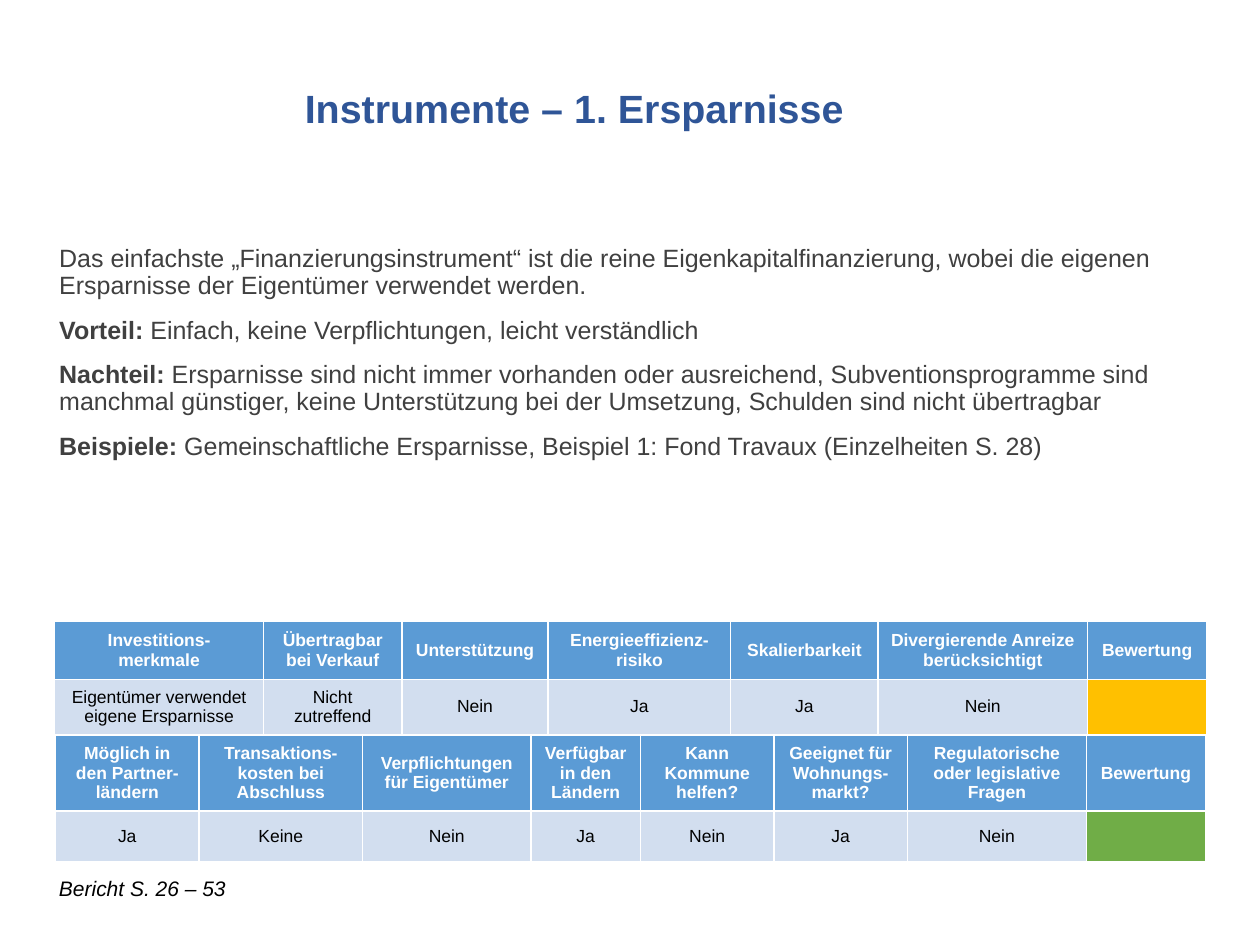
from dataclasses import dataclass

from lxml.etree import SubElement
from pptx import Presentation
from pptx.dml.color import RGBColor
from pptx.enum.text import MSO_ANCHOR, MSO_AUTO_SIZE, PP_ALIGN
from pptx.oxml.ns import qn
from pptx.shapes.base import BaseShape
from pptx.slide import Slide
from pptx.table import _Cell
from pptx.text.text import _Run
from pptx.util import Cm, Pt


@dataclass(frozen=True)
class Theme:
    font: str = "Arial"
    title: str = "2F5597"
    body: str = "404040"
    black: str = "000000"
    white: str = "FFFFFF"
    header_fill: str = "5B9BD5"
    row_fill: str = "D2DEEF"
    amber: str = "FFC000"
    green: str = "70AD47"
    title_size: float = 22.5
    body_size: float = 14.3
    source_size: float = 12
    table_size: float = 10


@dataclass(frozen=True)
class Box:
    left: float
    top: float
    width: float
    height: float


@dataclass(frozen=True)
class Statement:
    label: str
    text: str


@dataclass(frozen=True)
class Column:
    header: str
    value: str
    width: float


@dataclass(frozen=True)
class RatingTable:
    left: float
    top: float
    row_heights: tuple[float, float]
    columns: tuple[Column, ...]
    rating_fill: str


THEME = Theme()

STATEMENTS = (
    Statement("", "Das einfachste „Finanzierungsinstrument“ ist die reine Eigenkapitalfinanzierung, "
                  "wobei die eigenen Ersparnisse der Eigentümer verwendet werden."),
    Statement("Vorteil: ", "Einfach, keine Verpflichtungen, leicht verständlich"),
    Statement("Nachteil: ", "Ersparnisse sind nicht immer vorhanden oder ausreichend, Subventionsprogramme "
                            "sind manchmal günstiger, keine Unterstützung bei der Umsetzung, "
                            "Schulden sind nicht übertragbar"),
    Statement("Beispiele: ", "Gemeinschaftliche Ersparnisse, Beispiel 1: Fond Travaux (Einzelheiten S. 28)"),
)

RATING_TABLES = (
    RatingTable(1.1, 12.53, (1.17, 1.06), (
        Column("Investitions-merkmale", "Eigentümer verwendet eigene Ersparnisse", 4.21),
        Column("Übertragbar bei Verkauf", "Nicht zutreffend", 2.79),
        Column("Unterstützung", "Nein", 2.95),
        Column("Energieeffizienz-risiko", "Ja", 3.68),
        Column("Skalierbarkeit", "Ja", 2.97),
        Column("Divergierende Anreize berücksichtigt", "Nein", 4.22),
        Column("Bewertung", "", 2.41),
    ), THEME.amber),
    RatingTable(1.12, 14.82, (1.49, 0.9), (
        Column("Möglich in den Partner-ländern", "Ja", 2.89),
        Column("Transaktions-kosten bei Abschluss", "Keine", 3.3),
        Column("Verpflichtungen für Eigentümer", "Nein", 3.39),
        Column("Verfügbar in den Ländern", "Ja", 2.21),
        Column("Kann Kommune helfen?", "Nein", 2.69),
        Column("Geeignet für Wohnungs-markt?", "Ja", 2.69),
        Column("Regulatorische oder legislative Fragen", "Nein", 3.61),
        Column("Bewertung", "", 2.4),
    ), THEME.green),
)


def place(shape: BaseShape, box: Box) -> None:
    shape.left, shape.top = Cm(box.left), Cm(box.top)
    shape.width, shape.height = Cm(box.width), Cm(box.height)


def format_run(run: _Run, size: float, color: str, bold: bool = False, italic: bool = False) -> None:
    font = run.font
    font.name, font.size = THEME.font, Pt(size)
    font.bold, font.italic = bold, italic
    font.color.rgb = RGBColor.from_string(color)


def fill_title(slide: Slide, text: str) -> None:
    title = slide.shapes.title
    place(title, Box(5.89, 1.52, 15.95, 1.42))
    frame = title.text_frame
    frame.text = text
    frame.auto_size = MSO_AUTO_SIZE.NONE
    frame.vertical_anchor = MSO_ANCHOR.MIDDLE
    paragraph = frame.paragraphs[0]
    paragraph.alignment = PP_ALIGN.LEFT
    paragraph.line_spacing = 0.9
    format_run(paragraph.runs[0], THEME.title_size, THEME.title, bold=True)


def fill_body(slide: Slide, statements: tuple[Statement, ...]) -> None:
    body = slide.placeholders[1]
    place(body, Box(0.94, 4.83, 22.71, 10.92))
    frame = body.text_frame
    frame.auto_size = MSO_AUTO_SIZE.NONE
    for index, statement in enumerate(statements):
        paragraph = frame.add_paragraph() if index else frame.paragraphs[0]
        properties = paragraph._p.get_or_add_pPr()
        properties.set("marL", "0")
        properties.set("indent", "0")
        SubElement(properties, qn("a:buNone"))
        paragraph.line_spacing = 0.9
        paragraph.space_before = Pt(10 if index else 0)
        for text, bold in ((statement.label, True), (statement.text, False)):
            if text:
                run = paragraph.add_run()
                run.text = text
                format_run(run, THEME.body_size, THEME.body, bold=bold)


def fill_cell(cell: _Cell, text: str, fill: str, color: str, bold: bool) -> None:
    cell.fill.solid()
    cell.fill.fore_color.rgb = RGBColor.from_string(fill)
    cell.vertical_anchor = MSO_ANCHOR.MIDDLE
    cell.text_frame.text = text
    paragraph = cell.text_frame.paragraphs[0]
    paragraph.alignment = PP_ALIGN.CENTER
    for run in paragraph.runs:
        format_run(run, THEME.table_size, color, bold=bold)


def draw_table(slide: Slide, rating: RatingTable) -> None:
    width = sum(column.width for column in rating.columns)
    frame = slide.shapes.add_table(2, len(rating.columns), Cm(rating.left), Cm(rating.top),
                                   Cm(width), Cm(sum(rating.row_heights)))
    table = frame.table
    for row, height in zip(table.rows, rating.row_heights):
        row.height = Cm(height)
    for index, column in enumerate(rating.columns):
        table.columns[index].width = Cm(column.width)
        value_fill = THEME.row_fill if column.value else rating.rating_fill
        fill_cell(table.cell(0, index), column.header, THEME.header_fill, THEME.white, True)
        fill_cell(table.cell(1, index), column.value, value_fill, THEME.black, False)


def draw_source(slide: Slide, text: str) -> None:
    source = slide.shapes.add_textbox(Cm(0.94), Cm(17.53), Cm(5.89), Cm(0.76))
    frame = source.text_frame
    frame.word_wrap = True
    frame.text = text
    format_run(frame.paragraphs[0].runs[0], THEME.source_size, THEME.black, italic=True)


def main() -> None:
    presentation = Presentation()
    presentation.slide_width, presentation.slide_height = Cm(25.4), Cm(19.05)
    slide = presentation.slides.add_slide(presentation.slide_layouts[1])
    fill_title(slide, "Instrumente – 1. Ersparnisse")
    fill_body(slide, STATEMENTS)
    draw_source(slide, "Bericht S. 26 – 53")
    for rating in RATING_TABLES:
        draw_table(slide, rating)
    presentation.save("out.pptx")


if __name__ == "__main__":
    main()
